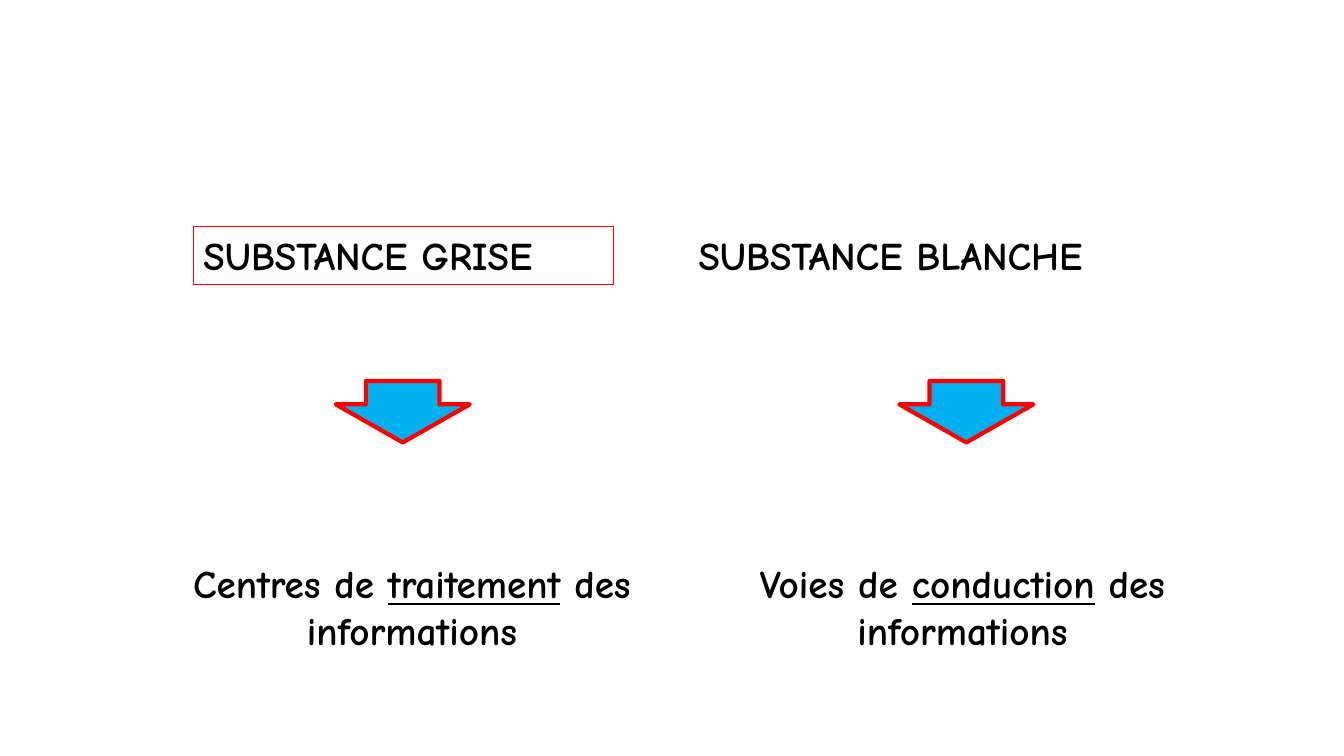
from pptx import Presentation
from pptx.dml.color import RGBColor
from pptx.enum.shapes import MSO_SHAPE
from pptx.enum.text import MSO_ANCHOR, MSO_AUTO_SIZE, PP_ALIGN
from pptx.util import Pt

RECTANGLE, DOWN_ARROW = MSO_SHAPE.RECTANGLE, MSO_SHAPE.DOWN_ARROW
TOP = MSO_ANCHOR.TOP
GROW = MSO_AUTO_SIZE.SHAPE_TO_FIT_TEXT
LEFT, CENTER = PP_ALIGN.LEFT, PP_ALIGN.CENTER

EMU_PER_PX = 9144  # 100 px to the inch
FONT, TEXT_SIZE = "Comic Neue", 28
BLACK, WHITE, RED, BLUE = "000000", "FFFFFF", "FF0000", "00B0F0"

# Each column: (text, left, width) of heading and role, arrow left, heading fill and line.
# The middle part of a role is underlined.
COLUMNS = [
    {"heading": ("SUBSTANCE BLANCHE", 683, 483), "fill": WHITE, "line": None,
     "arrow_left": 892,
     "role": (("Voies de ", "conduction", " des informations"), 742, 425)},
    {"heading": ("SUBSTANCE GRISE", 192, 417), "fill": None, "line": RED,
     "arrow_left": 333,
     "role": (("Centres de ", "traitement", " des informations"), 175, 467)},
]
HEADING_TOP, HEADING_HEIGHT = 225, 57
ARROW_TOP, ARROW_WIDTH, ARROW_HEIGHT = 378, 133, 61
ARROW_ADJUSTMENTS = (0.55, 0.62)
ROLE_TOP, ROLE_HEIGHT = 550, 103


def px(*lengths):
    return [length * EMU_PER_PX for length in lengths]


def color(hex_string):
    return RGBColor.from_string(hex_string)


def add_figure(page, kind, place, fill, line, line_width):
    figure = page.shapes.add_shape(kind, *px(*place))
    figure.shadow.inherit = False
    if fill:
        figure.fill.solid()
        figure.fill.fore_color.rgb = color(fill)
    else:
        figure.fill.background()
    if line:
        figure.line.color.rgb = color(line)
        figure.line.width = Pt(line_width)
    else:
        figure.line.fill.background()
    return figure


def write(box, parts, alignment):
    """Fill the box with one paragraph, underlining its second part."""
    frame = box.text_frame
    frame.word_wrap = True
    frame.auto_size = GROW
    frame.vertical_anchor = TOP
    para = frame.paragraphs[0]
    para.alignment = alignment
    for index, part in enumerate(parts):
        span = para.add_run()
        span.text = part
        span.font.name = FONT
        span.font.size = Pt(TEXT_SIZE)
        span.font.bold = True
        span.font.underline = index == 1
        span.font.color.rgb = color(BLACK)


def add_column(page, column):
    text, left, width = column["heading"]
    heading = add_figure(page, RECTANGLE, (left, HEADING_TOP, width, HEADING_HEIGHT),
                         column["fill"], column["line"], 0.75)
    write(heading, [text], LEFT)

    arrow = add_figure(page, DOWN_ARROW,
                       (column["arrow_left"], ARROW_TOP, ARROW_WIDTH, ARROW_HEIGHT),
                       BLUE, RED, 3)
    for index, value in enumerate(ARROW_ADJUSTMENTS):
        arrow.adjustments[index] = value

    parts, left, width = column["role"]
    role = page.shapes.add_textbox(*px(left, ROLE_TOP, width, ROLE_HEIGHT))
    write(role, parts, CENTER)


def main():
    deck = Presentation()
    deck.slide_width, deck.slide_height = px(1333, 750)
    page = deck.slides.add_slide(deck.slide_layouts[6])
    page.background.fill.solid()
    page.background.fill.fore_color.rgb = color(WHITE)
    for column in COLUMNS:
        add_column(page, column)
    deck.save("out.pptx")


if __name__ == "__main__":
    main()
